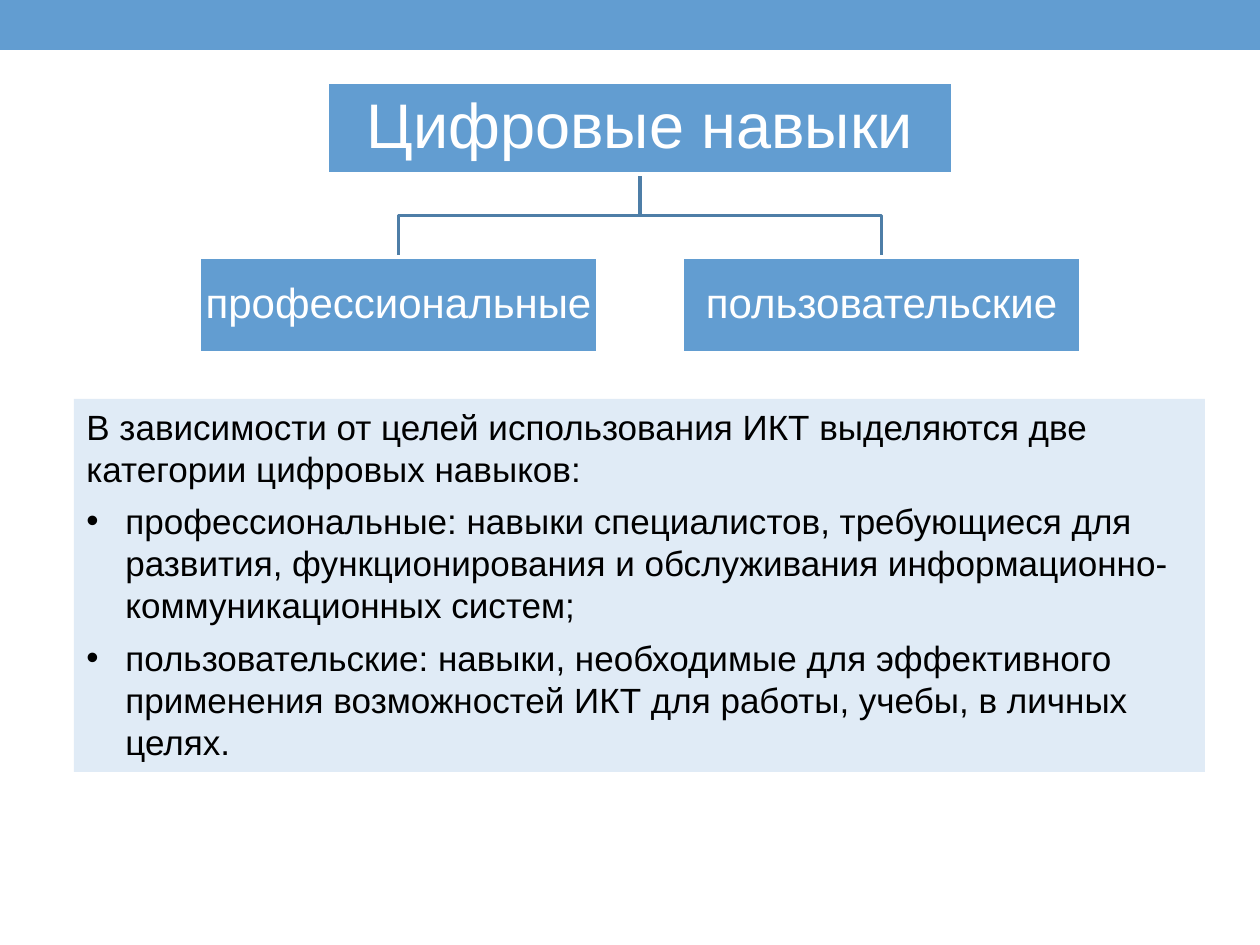
from lxml.etree import SubElement
from pptx import Presentation
from pptx.dml.color import RGBColor
from pptx.enum.shapes import MSO_SHAPE
from pptx.enum.text import MSO_ANCHOR, PP_ALIGN
from pptx.oxml.ns import qn
from pptx.util import Pt

# Content
ROOT = "Цифровые навыки"
BRANCHES = ["профессиональные", "пользовательские"]
INTRO = "В зависимости от целей использования ИКТ выделяются две категории цифровых навыков:"
CATEGORIES = [
    "профессиональные: навыки специалистов, требующиеся для развития, "
    "функционирования и обслуживания информационно-коммуникационных систем;",
    "пользовательские: навыки, необходимые для эффективного применения "
    "возможностей ИКТ для работы, учебы, в личных целях.",
]

# Style and layout, in px (126 to the inch)
COLORS = {"blue": "629DD1", "line": "4E7EA7", "pale": "E0EBF6", "white": "FFFFFF", "black": "000000"}
FONT = "Arial"
SLIDE_W, SLIDE_H = 1260, 945
BAND_H = 50
CENTER_X = 640
ROOT_TOP, ROOT_W, ROOT_H = 82, 626, 92
BRANCH_TOP, BRANCH_W, BRANCH_H, BRANCH_GAP = 257, 399, 96, 84
PANEL = (74, 399, 1131, 373)
INDENT = 39
OUTLINE = Pt(2.08)


def px(length):
    return round(length * 914400 / 126)


def color(name):
    return RGBColor.from_string(COLORS[name])


def set_font(paragraph, size, name):
    paragraph.font.size = Pt(size)
    paragraph.font.name = FONT
    paragraph.font.color.rgb = color(name)


def add_box(slide, left, top, width, height, fill, outline=None):
    box = slide.shapes.add_shape(MSO_SHAPE.RECTANGLE, *map(px, (left, top, width, height)))
    box.shadow.inherit = False
    box.fill.solid()
    box.fill.fore_color.rgb = color(fill)
    if outline:
        box.line.color.rgb = color(outline)
        box.line.width = OUTLINE
    else:
        box.line.fill.background()
    return box


def add_node(slide, text, center, top, width, height, size, inset):
    node = add_box(slide, center - width / 2, top, width, height, "blue", "white")
    frame = node.text_frame
    frame.word_wrap = True
    frame.vertical_anchor = MSO_ANCHOR.MIDDLE
    frame.margin_left = frame.margin_right = frame.margin_top = frame.margin_bottom = px(inset)
    label = frame.paragraphs[0]
    label.text = text
    label.alignment = PP_ALIGN.CENTER
    label.line_spacing = 0.9
    set_font(label, size, "white")


def add_branch_line(slide, center):
    start = ROOT_TOP + ROOT_H
    middle = (start + BRANCH_TOP) / 2
    builder = slide.shapes.build_freeform(px(CENTER_X), px(start))
    corners = [(CENTER_X, middle), (center, middle), (center, BRANCH_TOP)]
    builder.add_line_segments([(px(x), px(y)) for x, y in corners], close=False)
    elbow = builder.convert_to_shape()
    elbow.shadow.inherit = False
    elbow.fill.background()
    elbow.line.color.rgb = color("line")
    elbow.line.width = OUTLINE


def add_bullet(paragraph):
    properties = paragraph._p.get_or_add_pPr()
    properties.set("marL", str(px(INDENT)))
    properties.set("indent", str(-px(INDENT)))
    SubElement(properties, qn("a:buFont")).set("typeface", FONT)
    SubElement(properties, qn("a:buChar")).set("char", "•")


def main():
    prs = Presentation()
    prs.slide_width, prs.slide_height = px(SLIDE_W), px(SLIDE_H)
    slide = prs.slides.add_slide(prs.slide_layouts[6])

    # Top band
    add_box(slide, 0, 0, SLIDE_W, BAND_H, "blue")

    # Skill tree: lines first, boxes over them
    step = BRANCH_W + BRANCH_GAP
    centers = [CENTER_X + (i - (len(BRANCHES) - 1) / 2) * step for i in range(len(BRANCHES))]
    for center in centers:
        add_branch_line(slide, center)
    add_node(slide, ROOT, CENTER_X, ROOT_TOP, ROOT_W, ROOT_H, 36, 4)
    for branch, center in zip(BRANCHES, centers):
        add_node(slide, branch, center, BRANCH_TOP, BRANCH_W, BRANCH_H, 24, 2)

    # Explanation panel
    frame = add_box(slide, *PANEL, "pale").text_frame
    frame.word_wrap = True
    frame.vertical_anchor = MSO_ANCHOR.TOP
    for i, text in enumerate([INTRO] + CATEGORIES):
        paragraph = frame.add_paragraph() if i else frame.paragraphs[0]
        paragraph.text = text
        paragraph.alignment = PP_ALIGN.LEFT
        paragraph.space_before = Pt(6)
        set_font(paragraph, 20, "black")
        if i:
            add_bullet(paragraph)

    prs.save("out.pptx")


if __name__ == "__main__":
    main()
